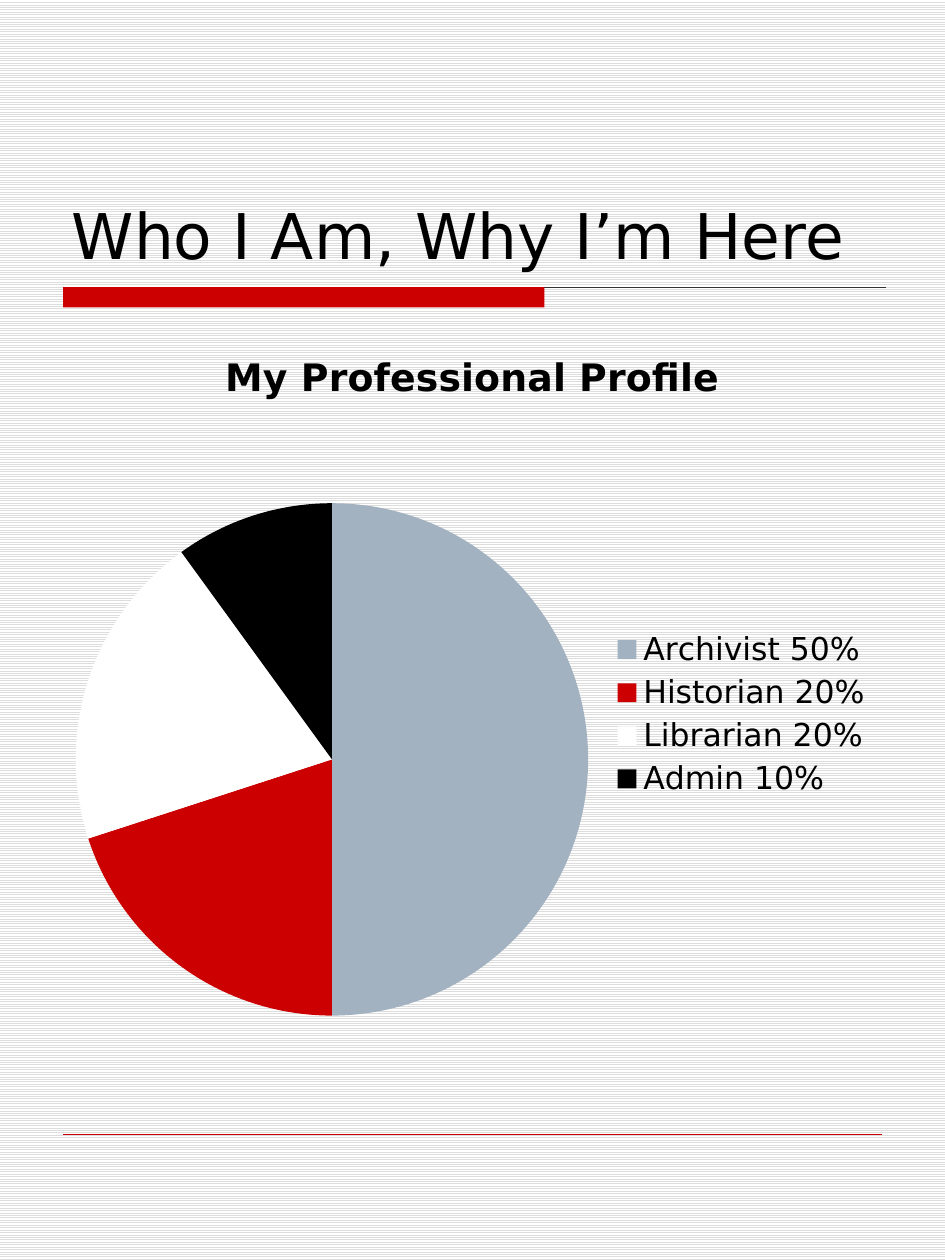
from lxml import etree
from pptx import Presentation
from pptx.chart.data import CategoryChartData
from pptx.dml.color import RGBColor
from pptx.enum import chart as ch, dml, shapes, text
from pptx.oxml.ns import qn
from pptx.util import Inches, Pt

FONT = "DejaVu Sans"
RED = "CC0000"


def rgb(color):
    return RGBColor.from_string(color)


def add_rule(s, x1, x2, y, color, width):
    """Add a horizontal line without a shadow."""
    line = s.shapes.add_connector(shapes.MSO_CONNECTOR.STRAIGHT,
                                  Inches(x1), Inches(y), Inches(x2), Inches(y))
    line.line.color.rgb = rgb(color)
    line.line.width = Pt(width)
    etree.SubElement(line._element.spPr, qn("a:effectLst"))


prs = Presentation()
prs.slide_width, prs.slide_height = Inches(7.5), Inches(10)
s = prs.slides.add_slide(prs.slide_layouts[5])

bg = s.background.fill
bg.patterned()
bg.pattern = dml.MSO_PATTERN.LIGHT_HORIZONTAL
bg.fore_color.rgb = rgb("DDDDDD")
bg.back_color.rgb = rgb("FFFFFF")

# Red bar and rules
add_rule(s, 0.5, 7.03, 2.28, "333333", 0.75)
bar = s.shapes.add_shape(shapes.MSO_SHAPE.RECTANGLE,
                         Inches(0.5), Inches(2.28), Inches(3.82), Inches(0.16))
bar.shadow.inherit = False
bar.fill.solid()
bar.fill.fore_color.rgb = rgb(RED)
bar.line.fill.background()
add_rule(s, 0.5, 7, 9, RED, 0.25)

# Title
title = s.shapes.title
title.left, title.top = Inches(0.47), Inches(0.44)
title.width, title.height = Inches(6.56), Inches(1.77)
tf = title.text_frame
tf.text = "Who I Am, Why I’m Here"
tf.word_wrap = True
tf.auto_size = text.MSO_AUTO_SIZE.NONE
tf.vertical_anchor = text.MSO_ANCHOR.BOTTOM
p = tf.paragraphs[0]
p.alignment = text.PP_ALIGN.LEFT
font = p.runs[0].font
font.name, font.size = FONT, Pt(36)
font.color.rgb = rgb("000000")

# Pie chart
profile = {"Archivist": (50, "A3B2C1"), "Historian": (20, RED),
           "Librarian": (20, "FFFFFF"), "Admin": (10, "000000")}
data = CategoryChartData()
data.categories = [f"{role} {share}%" for role, (share, _) in profile.items()]
data.add_series("My Professional Profile", [share for share, _ in profile.values()])
chart = s.shapes.add_chart(ch.XL_CHART_TYPE.PIE, Inches(0.47), Inches(2.56),
                           Inches(6.56), Inches(6.22), data).chart
chart.font.name, chart.font.size = FONT, Pt(18)
chart.font.color.rgb = rgb("000000")

chart.has_title = True
chart.chart_title.include_in_layout = False
chart.chart_title.text_frame.text = "My Professional Profile"
font = chart.chart_title.text_frame.paragraphs[0].runs[0].font
font.name, font.size, font.bold = FONT, Pt(21.6), True
font.color.rgb = rgb("000000")

chart.has_legend = True
chart.legend.position = ch.XL_LEGEND_POSITION.RIGHT
chart.legend.include_in_layout = False

plot = chart.plots[0]
plot.vary_by_categories = True
for i, (_, color) in enumerate(profile.values()):
    fmt = plot.series[0].points[i].format
    fmt.fill.solid()
    fmt.fill.fore_color.rgb = rgb(color)
    fmt.line.fill.background()

# Place the pie inside the chart frame
area = chart._chartSpace.chart.plotArea
for old in area.findall(qn("c:layout")):
    area.remove(old)
layout = etree.Element(qn("c:layout"))
area.insert(0, layout)
manual = etree.SubElement(layout, qn("c:manualLayout"))
for tag, val in [("layoutTarget", "inner"), ("xMode", "edge"), ("yMode", "edge"),
                 ("x", 0.02), ("y", 0.23), ("w", 0.62), ("h", 0.655)]:
    etree.SubElement(manual, qn(f"c:{tag}")).set("val", str(val))

prs.save("out.pptx")
